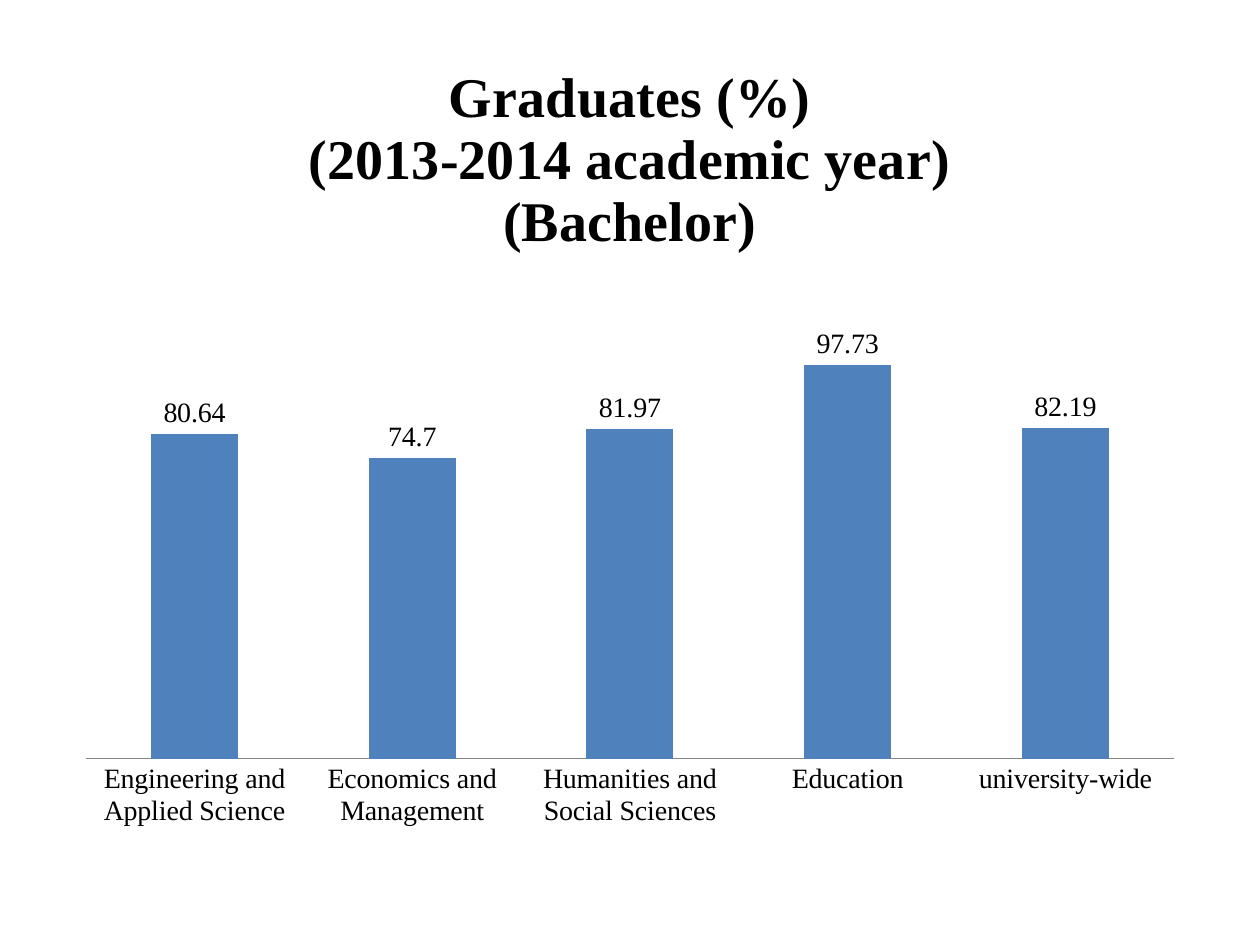
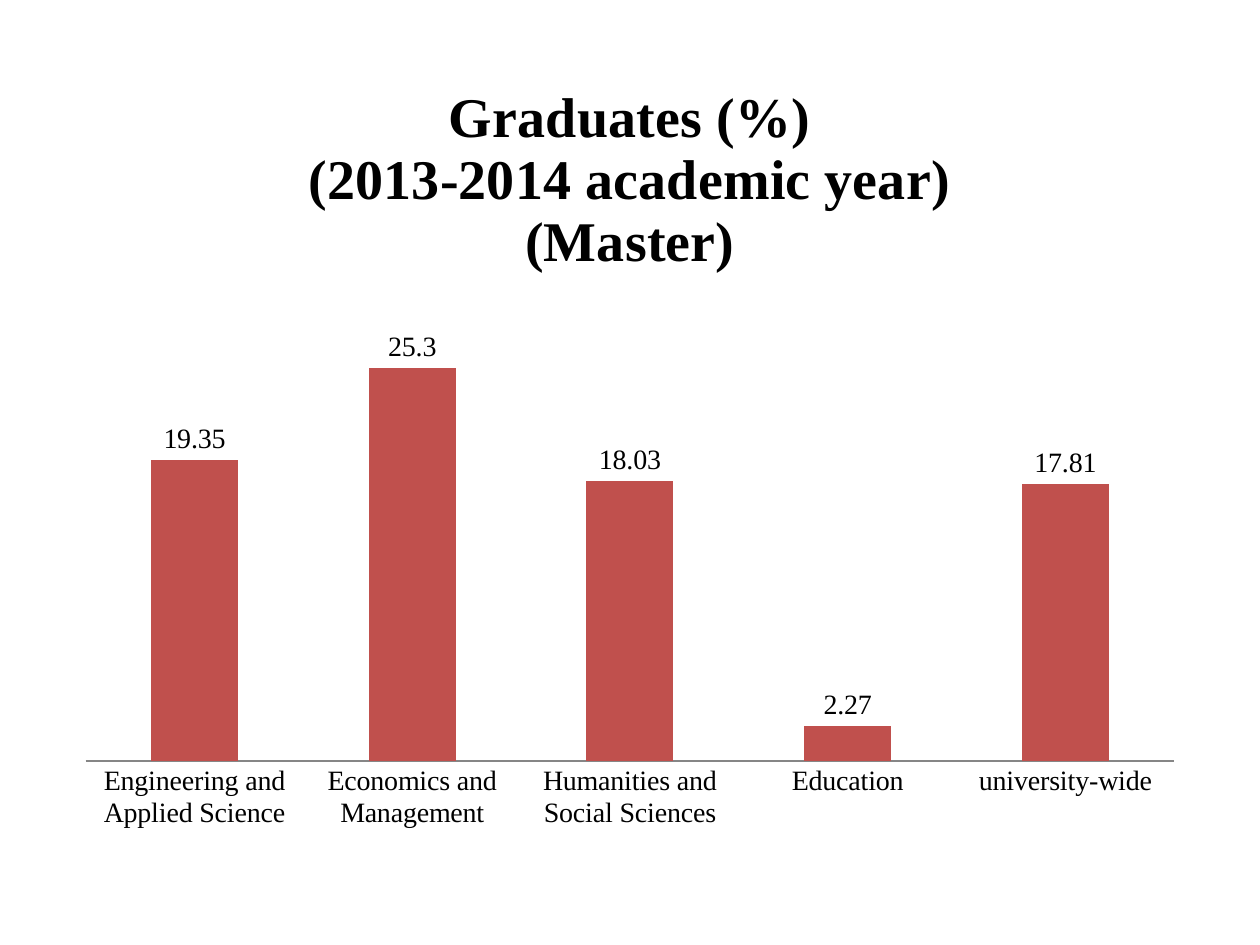
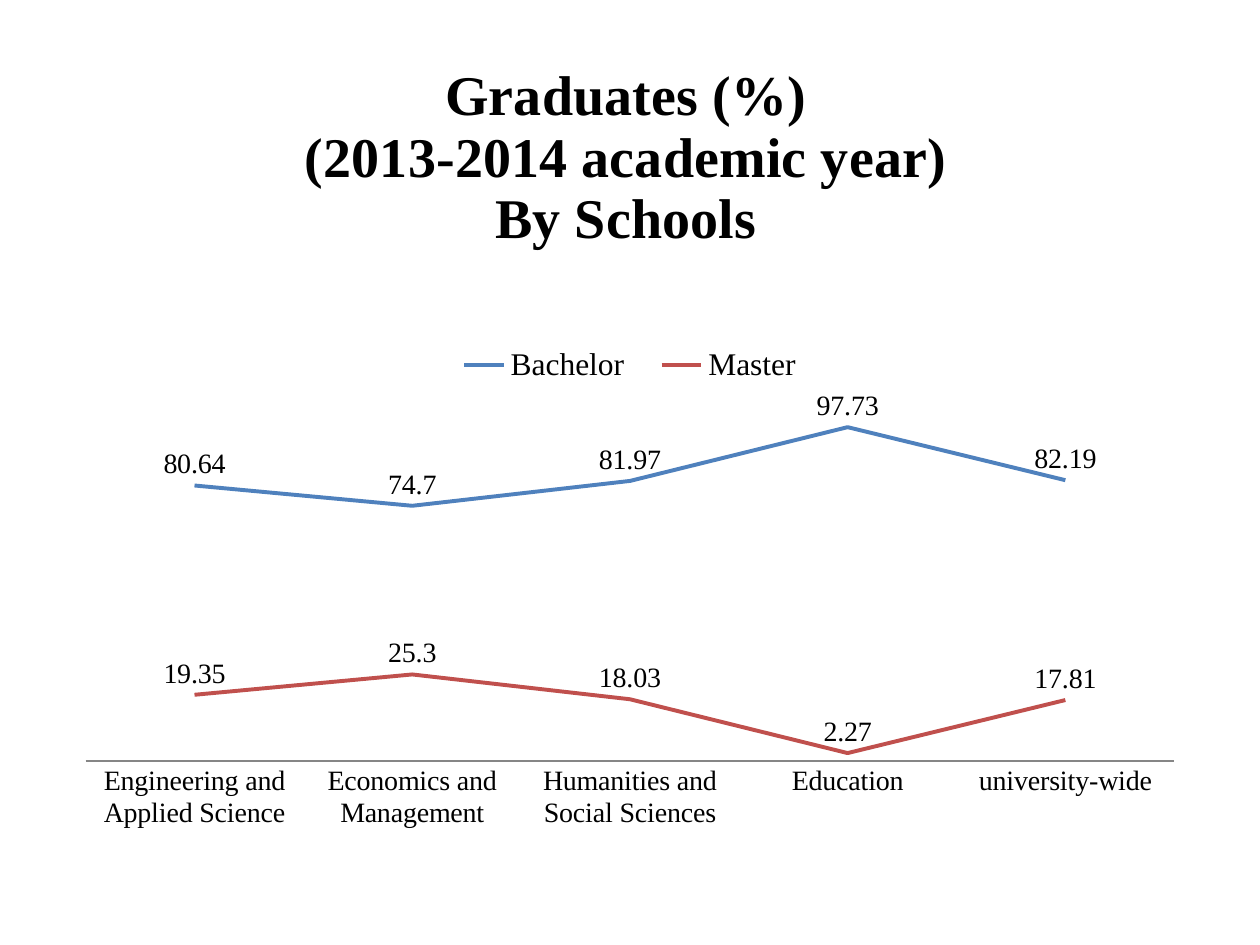
import pptx
import pptx.chart.data
import pptx.dml.color
import pptx.enum.chart
import pptx.oxml
import pptx.oxml.ns
import pptx.util

Inches, Pt = pptx.util.Inches, pptx.util.Pt
RGBColor = pptx.dml.color.RGBColor
XL = pptx.enum.chart

BLACK = RGBColor(0x00, 0x00, 0x00)
GREY = RGBColor(0x86, 0x86, 0x86)
BLUE = RGBColor(0x4F, 0x81, 0xBD)
RED = RGBColor(0xC0, 0x50, 0x4D)

SERIF = "Times New Roman"
BASE_FONT = {"name": "Calibri", "size": Pt(10)}
TITLE_FONT = {"name": SERIF, "size": Pt(32), "bold": True}
LABEL_FONT = {"name": SERIF, "size": Pt(16), "bold": False}
LEGEND_FONT = {"name": SERIF, "size": Pt(18), "bold": False}

SCHOOLS = ["Engineering and Applied Science", "Economics and Management",
           "Humanities and Social Sciences", "Education", "university-wide"]
BACHELOR = [80.64, 74.7, 81.97, 97.73, 82.19]
MASTER = [19.35, 25.3, 18.03, 2.27, 17.81]
TITLE = "Graduates (%)\n(2013-2014 academic year)\n"

TALL_BOX = (0.5, 0.31, 9, 6.39)
CHART_BOX = (0.5, 0.47, 9, 6.23)


def set_font(font, values):
    for name, value in values.items():
        setattr(font, name, value)
    font.color.rgb = BLACK


def set_layout(chart, part, index, inner=False, **fractions):
    """Place a chart part by fractions of the chart; index is where its layout element belongs."""
    el = chart._chartSpace.xpath(f"c:chart/{part}")[0]
    for old in el.xpath("c:layout"):
        el.remove(old)
    target = '<c:layoutTarget val="inner"/>' if inner else ""
    modes = "".join(f'<c:{k}Mode val="edge"/>' for k in "xy")
    values = "".join(f'<c:{k} val="{v}"/>' for k, v in fractions.items())
    el.insert(index, pptx.oxml.parse_xml(
        f'<c:layout {pptx.oxml.ns.nsdecls("c")}><c:manualLayout>'
        f"{target}{modes}{values}</c:manualLayout></c:layout>"))


def add_graduates_chart(slide, box, kind, subtitle, series, top, maximum):
    """Add a titled chart whose value axis is hidden; top and the plot height are fractions."""
    data = pptx.chart.data.CategoryChartData()
    data.categories = SCHOOLS
    for name, values in series:
        data.add_series(name, values)
    chart = slide.shapes.add_chart(kind, *map(Inches, box), data).chart
    set_font(chart.font, BASE_FONT)

    chart.has_title = True
    tf = chart.chart_title.text_frame
    tf.text = TITLE + subtitle
    for p in tf.paragraphs:
        set_font(p.runs[0].font, TITLE_FONT)
    chart.has_legend = False

    axis = chart.category_axis
    axis.major_tick_mark = XL.XL_TICK_MARK.NONE
    axis.format.line.color.rgb = GREY
    axis.format.line.width = Pt(0.75)
    set_font(axis.tick_labels.font, LABEL_FONT)
    values_axis = chart.value_axis
    values_axis.visible = False
    values_axis.has_major_gridlines = False
    values_axis.minimum_scale = 0
    values_axis.maximum_scale = maximum

    chart.plots[0].vary_by_categories = False
    set_layout(chart, "c:plotArea", 0, inner=True,
               x=0.02, y=top, w=0.96, h=round(0.894 - top, 3))
    return chart


def label_series(series, position):
    labels = series.data_labels
    labels.show_value = True
    labels.position = position
    set_font(labels.font, LABEL_FONT)


def column_slide(slide, box, subtitle, values, color, top, maximum):
    chart = add_graduates_chart(slide, box, XL.XL_CHART_TYPE.COLUMN_CLUSTERED,
                                subtitle, [("Series 1", values)], top, maximum)
    plot = chart.plots[0]
    plot.gap_width = 150
    plot.overlap = -25
    columns = plot.series[0]
    columns.format.fill.solid()
    columns.format.fill.fore_color.rgb = color
    label_series(columns, XL.XL_LABEL_POSITION.OUTSIDE_END)


def line_slide(slide, box):
    chart = add_graduates_chart(slide, box, XL.XL_CHART_TYPE.LINE, "By Schools",
                                [("Bachelor", BACHELOR), ("Master", MASTER)], 0.372, 120)
    for line, color in zip(chart.plots[0].series, (BLUE, RED)):
        line.smooth = False
        line.marker.style = XL.XL_MARKER_STYLE.NONE
        line.format.line.color.rgb = color
        line.format.line.width = Pt(2.25)
        label_series(line, XL.XL_LABEL_POSITION.ABOVE)

    chart.has_legend = True
    chart.legend.position = XL.XL_LEGEND_POSITION.TOP
    chart.legend.include_in_layout = False
    set_font(chart.legend.font, LEGEND_FONT)
    set_layout(chart, "c:legend", 1, x=0.33, y=0.36, w=0.34, h=0.06)
    set_layout(chart, "c:title", 1, x=0.21, y=-0.01)


def main():
    prs = pptx.Presentation()
    prs.slide_width, prs.slide_height = Inches(10), Inches(7.5)
    bachelor, master, schools = (
        prs.slides.add_slide(prs.slide_layouts[6]) for _ in range(3))
    column_slide(bachelor, TALL_BOX, "(Bachelor)", BACHELOR, BLUE, 0.294, 120)
    column_slide(master, CHART_BOX, "(Master)", MASTER, RED, 0.3, 30)
    line_slide(schools, CHART_BOX)
    prs.save("out.pptx")


if __name__ == "__main__":
    main()
